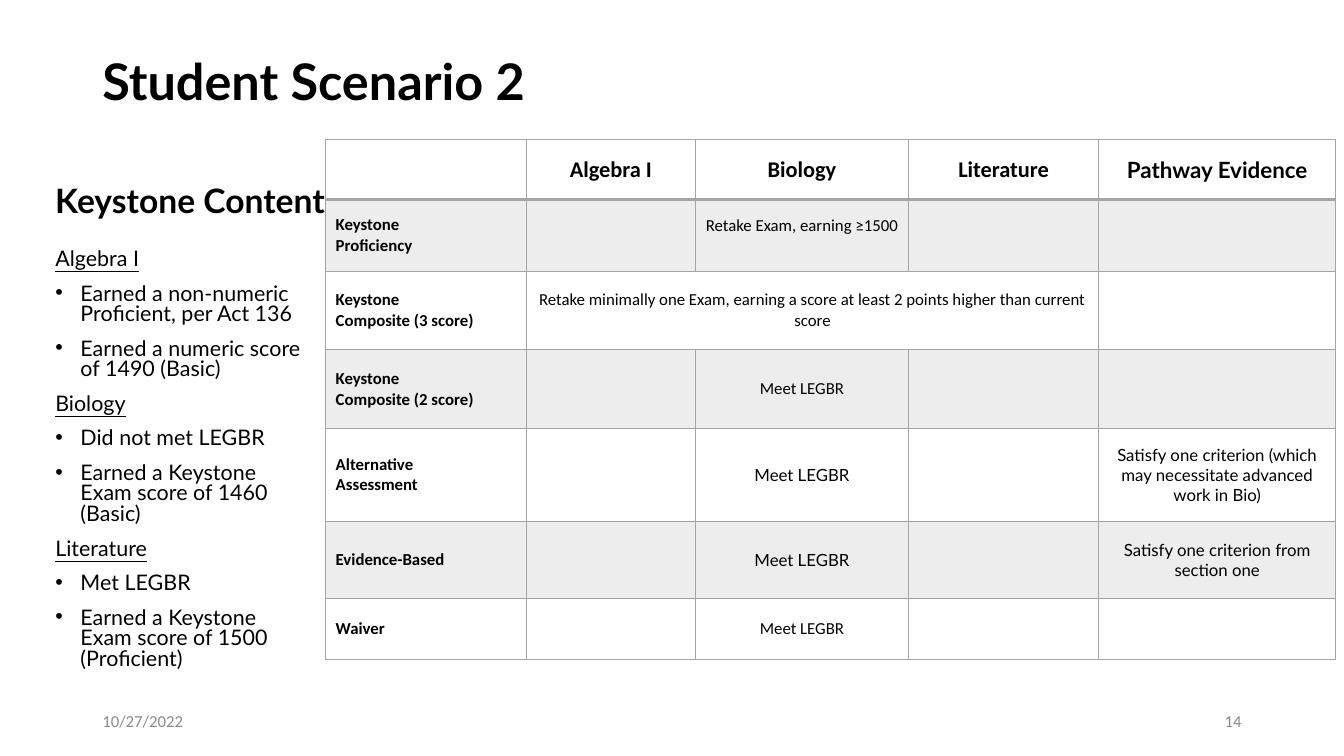
from lxml.etree import SubElement
from pptx import Presentation
from pptx.dml.color import RGBColor
from pptx.enum.text import MSO_ANCHOR, PP_ALIGN
from pptx.oxml import parse_xml
from pptx.oxml.ns import nsdecls, qn
from pptx.util import Pt


def color(hex_value):
    return RGBColor.from_string(hex_value)


def write(paragraph, text, layout, font, ink="000000"):
    run = paragraph.add_run()
    run.text = text
    for target, values in ((paragraph, layout), (run.font, font)):
        for key, value in values.items():
            setattr(target, key, value)
    run.font.color.rgb = color(ink)


deck = Presentation()
deck.slide_width, deck.slide_height = Pt(960), Pt(540)
slide = deck.slides.add_slide(deck.slide_layouts[6])

LEFT, CENTER, RIGHT = PP_ALIGN.LEFT, PP_ALIGN.CENTER, PP_ALIGN.RIGHT
TOP, MIDDLE, BOTTOM = MSO_ANCHOR.TOP, MSO_ANCHOR.MIDDLE, MSO_ANCHOR.BOTTOM

# Title, section heading, date and slide number
title_font = {"name": "Lato", "size": Pt(36), "bold": True}
heading_font = {"name": "Lato", "size": Pt(24), "bold": True}
footer_font = {"name": "Calibri", "size": Pt(12)}
single_lines = [
    ("Student Scenario 2", (66, 28.8, 828, 104.4), LEFT, 0.9, title_font, "000000",
     {"vertical_anchor": TOP, "margin_top": Pt(12)}),
    ("Keystone Content", (32.4, 122.4, 296, 64.8), LEFT, 0.9, heading_font, "000000",
     {"vertical_anchor": BOTTOM, "margin_bottom": Pt(29.5)}),
    ("10/27/2022", (66, 500.4, 216, 28.8), LEFT, 1.0, footer_font, "8C8C8C",
     {"vertical_anchor": MIDDLE}),
    ("14", (678, 500.4, 216, 28.8), RIGHT, 1.0, footer_font, "8C8C8C",
     {"vertical_anchor": MIDDLE}),
]
for text, place, alignment, spacing, font, ink, frame_format in single_lines:
    frame = slide.shapes.add_textbox(*map(Pt, place)).text_frame
    frame.word_wrap = True
    for key, value in frame_format.items():
        setattr(frame, key, value)
    write(frame.paragraphs[0], text,
          {"alignment": alignment, "line_spacing": spacing}, font, ink)

# Keystone results by subject
results = {
    "Algebra I": ["Earned a non-numeric Proficient, per Act 136",
                  "Earned a numeric score of 1490 (Basic)"],
    "Biology": ["Did not met LEGBR",
                "Earned a Keystone Exam score of 1460 (Basic)"],
    "Literature": ["Met LEGBR",
                   "Earned a Keystone Exam score of 1500 (Proficient)"],
}
content = slide.shapes.add_textbox(Pt(32.4), Pt(175), Pt(190.8), Pt(290)).text_frame
content.word_wrap = True
lines = [(text, text == subject) for subject, outcomes in results.items()
         for text in [subject, *outcomes]]
for index, (text, is_subject) in enumerate(lines):
    paragraph = content.add_paragraph() if index else content.paragraphs[0]
    layout = {"line_spacing": 0.8, "space_before": Pt(10 if index else 0)}
    if not is_subject:
        properties = paragraph._p.get_or_add_pPr()
        properties.set("marL", str(Pt(18)))
        properties.set("indent", str(-Pt(18)))
        SubElement(properties, qn("a:buFont"), typeface="Arial")
        SubElement(properties, qn("a:buChar"), char="•")
    write(paragraph, text, layout,
          {"name": "Lato", "size": Pt(15.3), "underline": is_subject})

# Pathway table
pathways = [
    ["", "Algebra I", "Biology", "Literature", "Pathway Evidence"],
    ["Keystone\nProficiency", "", "Retake Exam, earning ≥1500", "", ""],
    ["Keystone\nComposite (3 score)", "Retake minimally one Exam, earning a score "
     "at least 2 points higher than current score", "", "", ""],
    ["Keystone\nComposite (2 score)", "", "Meet LEGBR", "", ""],
    ["Alternative\nAssessment", "", "Meet LEGBR", "",
     "Satisfy one criterion (which may necessitate advanced work in Bio)"],
    ["Evidence-Based", "", "Meet LEGBR", "", "Satisfy one criterion from section one"],
    ["Waiver", "", "Meet LEGBR", "", ""],
]
column_widths = [143.3, 121, 152, 136, 169.2]
row_heights = [43.2, 51.1, 56.2, 56.2, 66.2, 55.4, 43.2]
lato_cells = {(0, 4), (4, 2), (4, 4), (5, 2), (5, 4)}
table = slide.shapes.add_table(
    len(row_heights), len(column_widths), Pt(232.6), Pt(99.4),
    Pt(sum(column_widths)), Pt(sum(row_heights))).table
table.first_row = table.horz_banding = False
for column, width in zip(table.columns, column_widths):
    column.width = Pt(width)
for row, height in zip(table.rows, row_heights):
    row.height = Pt(height)
table.cell(2, 1).merge(table.cell(2, 3))

for r, entries in enumerate(pathways):
    for c, entry in enumerate(entries):
        cell = table.cell(r, c)
        cell.vertical_anchor = MIDDLE

        # Borders, heavier below the header
        cell_properties = cell._tc.get_or_add_tcPr()
        for side in "LRTB":
            heavy = (r, side) in {(0, "B"), (1, "T")}
            cell_properties.append(parse_xml(
                f'<a:ln{side} {nsdecls("a")} w="{Pt(2 if heavy else 1)}">'
                f'<a:solidFill><a:srgbClr val="A5A5A5"/></a:solidFill></a:ln{side}>'))

        # Shaded bands on odd rows
        if r % 2:
            cell.fill.solid()
            cell.fill.fore_color.rgb = color("A5A5A5")
            shade = cell_properties.find(qn("a:solidFill"))[0]
            SubElement(shade, qn("a:alpha"), val="20000")
        else:
            cell.fill.background()

        if not entry:
            continue
        for index, text in enumerate(entry.split("\n")):
            paragraph = (cell.text_frame.add_paragraph() if index
                         else cell.text_frame.paragraphs[0])
            write(paragraph, text, {"alignment": CENTER if r == 0 or c else LEFT},
                  {"name": "Lato" if (r, c) in lato_cells else "Calibri",
                   "size": Pt(12 if r else 16), "bold": r == 0 or c == 0})

# The retake note sits above the middle of its cell
retake_margins = {"margin_left": Pt(3.6), "margin_right": Pt(3.6), "margin_bottom": Pt(18)}
for key, value in retake_margins.items():
    setattr(table.cell(1, 2), key, value)

deck.save("out.pptx")
